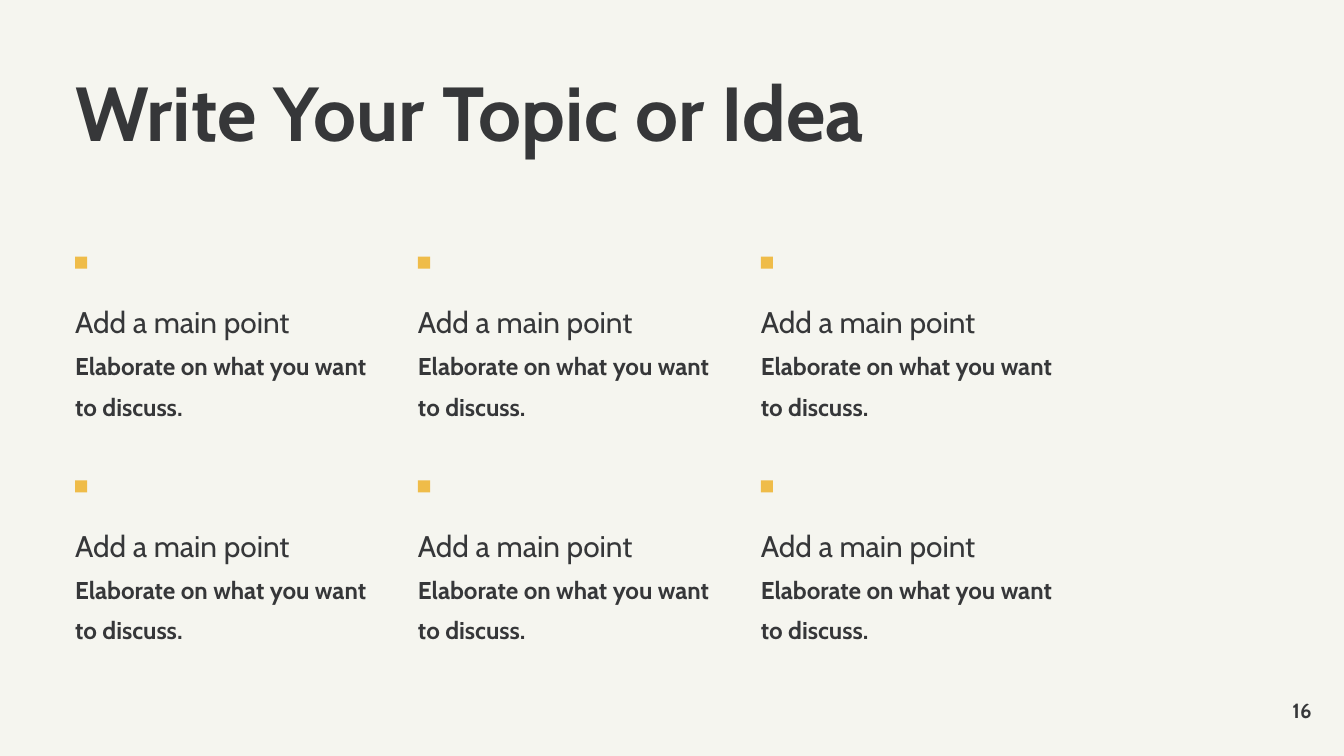
from pptx import Presentation
from pptx.dml.color import RGBColor
from pptx.enum.shapes import MSO_SHAPE as Shape
from pptx.enum.text import MSO_ANCHOR as Anchor, MSO_AUTO_SIZE as AutoSize, PP_ALIGN as Align
from pptx.util import Cm, Pt

PAPER = RGBColor(0xF5, 0xF5, 0xEF)
INK = RGBColor(0x36, 0x37, 0x39)
AMBER = RGBColor(0xEF, 0xBC, 0x49)

LEFT, TOP = 1.42, 4.85
COLUMN_STEP, ROW_STEP = 6.48, 4.23
MARKER_SIZE, TEXT_DROP = 0.23, 0.62


def prepare_frame(box, anchor=Anchor.TOP):
    frame = box.text_frame
    frame.margin_left = frame.margin_right = 0
    frame.margin_top = frame.margin_bottom = 0
    frame.word_wrap = True
    frame.auto_size = AutoSize.NONE
    frame.vertical_anchor = anchor
    return frame.paragraphs[0]


def style_font(font, size, bold):
    font.name = "Cabin"
    font.size = Pt(size)
    font.bold = bold
    font.color.rgb = INK


deck = Presentation()
deck.slide_width, deck.slide_height = Cm(25.4), Cm(14.29)
page = deck.slides.add_slide(deck.slide_layouts[5])
page.background.fill.solid()
page.background.fill.fore_color.rgb = PAPER

# Title
title = page.shapes.title
title.left, title.top, title.width, title.height = Cm(LEFT), Cm(1.42), Cm(18), Cm(2)
para = prepare_frame(title)
para.text = "Write Your Topic or Idea"
para.alignment = Align.LEFT
para.line_spacing = 0.9
style_font(para.font, 41, True)

# Grid of main points, each under a square marker
for row in range(2):
    for column in range(3):
        x = LEFT + column * COLUMN_STEP
        y = TOP + row * ROW_STEP

        marker = page.shapes.add_shape(
            Shape.RECTANGLE, Cm(x), Cm(y), Cm(MARKER_SIZE), Cm(MARKER_SIZE))
        marker.shadow.inherit = False
        marker.fill.solid()
        marker.fill.fore_color.rgb = AMBER
        marker.line.fill.background()

        box = page.shapes.add_textbox(Cm(x), Cm(y + TEXT_DROP), Cm(5.87), Cm(2.67))
        para = prepare_frame(box)
        para.line_spacing = 1.4
        heading = para.add_run()
        heading.text = "Add a main point"
        style_font(heading.font, 16, False)
        para.add_line_break()
        detail = para.add_run()
        detail.text = "Elaborate on what you want to discuss."
        style_font(detail.font, 13, True)

# Page number
number = page.shapes.add_textbox(Cm(23.27), Cm(13.18), Cm(1.52), Cm(0.51))
para = prepare_frame(number, Anchor.MIDDLE)
para.text = "16"
para.alignment = Align.RIGHT
style_font(para.font, 11, True)

deck.save("out.pptx")
